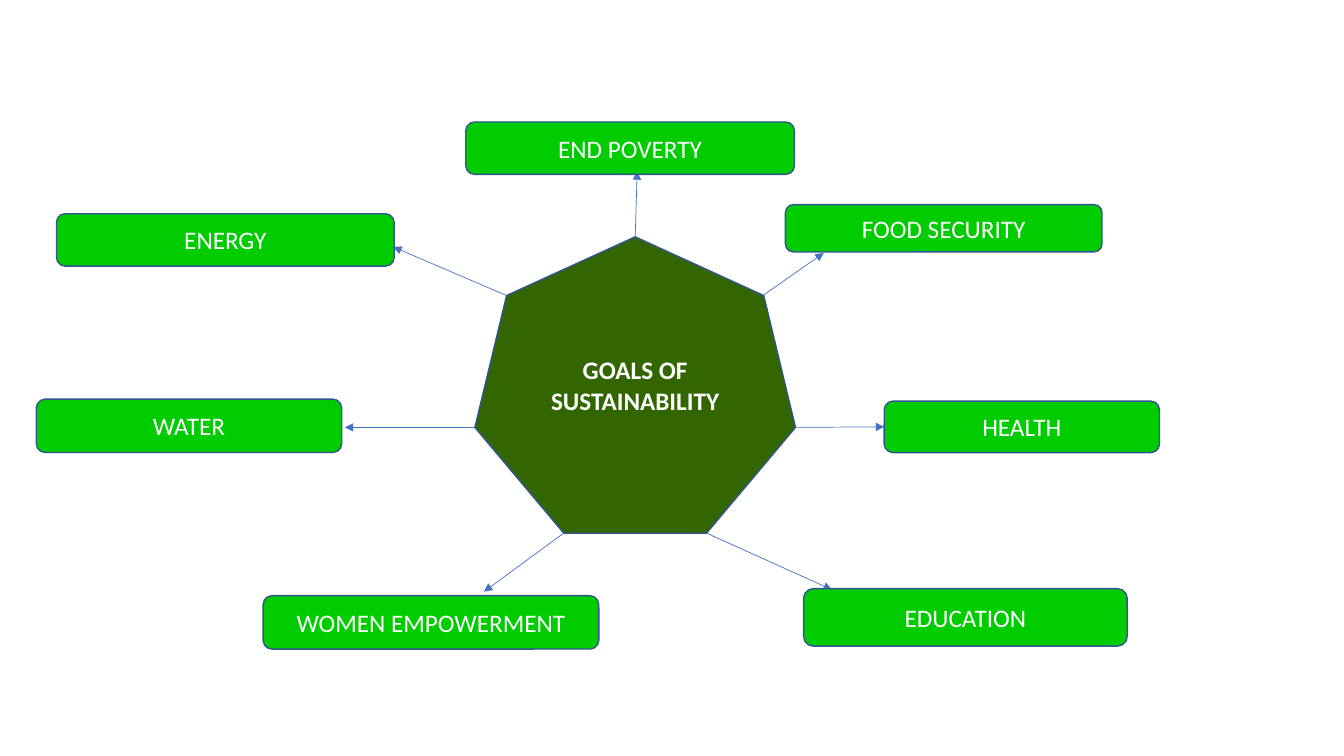
from lxml.etree import SubElement
from pptx import Presentation
from pptx.dml.color import RGBColor
from pptx.enum.shapes import MSO_CONNECTOR as LINK, MSO_SHAPE as SHAPE
from pptx.enum.text import MSO_ANCHOR as ANCHOR, PP_ALIGN as ALIGN
from pptx.oxml.ns import qn
from pptx.util import Inches, Pt


def color(code):
    return RGBColor.from_string(code)


def add_block(kind, place, fill, text, bold=False):
    """Add a filled, outlined shape with centred white text."""
    block = slide.shapes.add_shape(kind, *map(Inches, place))
    block.shadow.inherit = False
    block.fill.solid()
    block.fill.fore_color.rgb = color(fill)
    block.line.color.rgb = color("325491")
    block.line.width = Pt(1)
    frame = block.text_frame
    frame.word_wrap = True
    frame.vertical_anchor = ANCHOR.MIDDLE
    para = frame.paragraphs[0]
    para.alignment = ALIGN.CENTER
    run = para.add_run()
    run.text = text
    run.font.name = "Calibri"
    run.font.size = Pt(18)
    run.font.bold = bold
    run.font.color.rgb = color("FFFFFF")
    return block


deck = Presentation()
deck.slide_width = Inches(13.33)
deck.slide_height = Inches(7.5)
slide = deck.slides.add_slide(deck.slide_layouts[6])

# Goals clockwise from the top: text, box, arrow start, arrow end
goals = [
    ("END POVERTY", (4.62, 1.21, 3.26, 0.52), (6.3, 2.35), (6.32, 1.7)),
    ("FOOD SECURITY", (7.79, 2.03, 3.14, 0.47), (7.57, 2.93), (8.17, 2.51)),
    ("HEALTH", (8.77, 3.98, 2.73, 0.51), (7.89, 4.24), (8.77, 4.23)),
    ("EDUCATION", (7.97, 5.84, 3.21, 0.57), (7.01, 5.29), (8.25, 5.85)),
    ("WOMEN EMPOWERMENT", (2.61, 5.91, 3.33, 0.53), (5.59, 5.29), (4.8, 5.87)),
    ("WATER", (0.36, 3.96, 3.03, 0.53), (4.71, 4.24), (3.42, 4.24)),
    ("ENERGY", (0.56, 2.12, 3.35, 0.52), (5.02, 2.93), (3.9, 2.45)),
]

add_block(SHAPE.HEPTAGON, (4.71, 2.35, 3.18, 2.94), "336600",
          "GOALS OF SUSTAINABILITY", bold=True)

# Arrows lie behind the goal boxes
arrows = {}
for name, place, start, end in goals:
    arrow = slide.shapes.add_connector(LINK.STRAIGHT, *map(Inches, start + end))
    arrow.line.color.rgb = color("4472C4")
    arrow.line.width = Pt(0.5)
    SubElement(arrow.line._get_or_add_ln(), qn("a:tailEnd"), type="triangle")
    SubElement(arrow._element.spPr, qn("a:effectLst"))
    arrows[name] = arrow

boxes = {}
for name, place, start, end in goals:
    boxes[name] = add_block(SHAPE.ROUNDED_RECTANGLE, place, "00CC00", name)

arrows["HEALTH"].end_connect(boxes["HEALTH"], 1)

deck.save("out.pptx")
